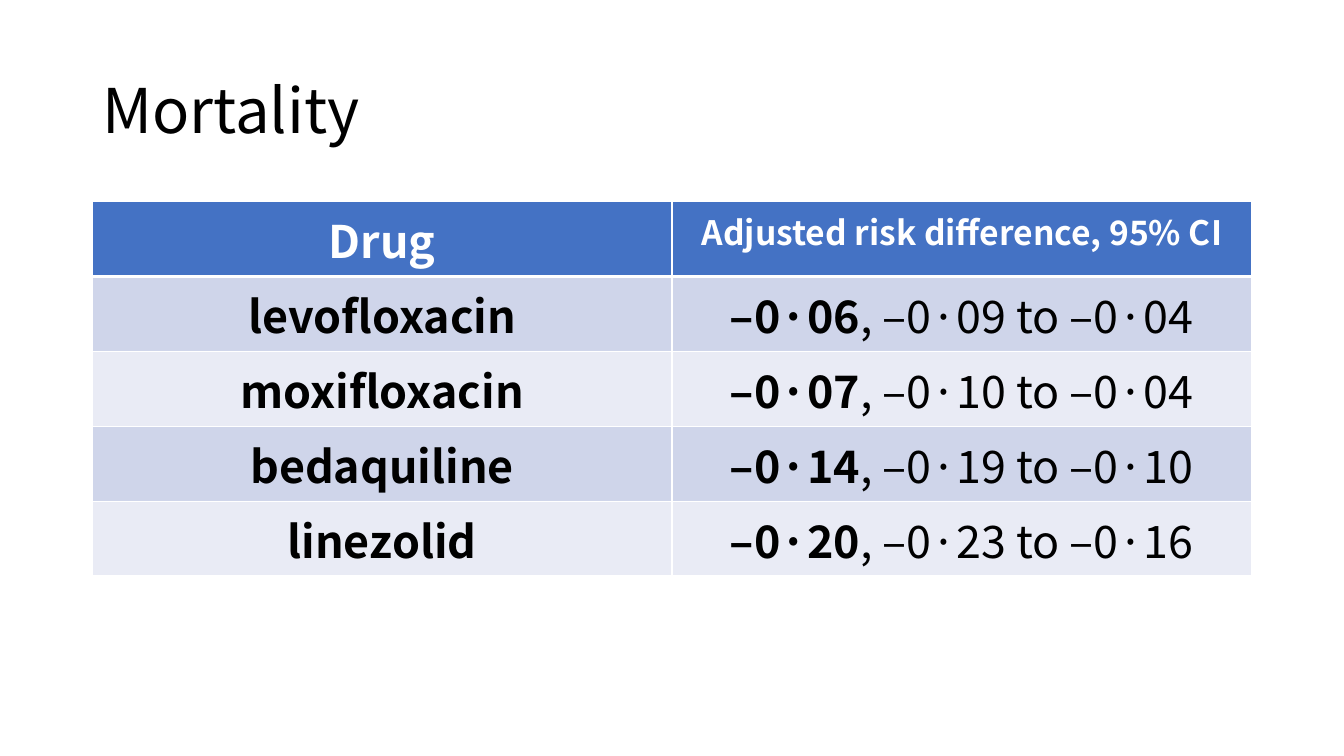
from dataclasses import dataclass

import pptx
import pptx.dml.color
import pptx.enum.text
import pptx.oxml.ns
import pptx.table
import pptx.text.text
import pptx.util
from lxml import etree

Pt = pptx.util.Pt
RGBColor = pptx.dml.color.RGBColor

FONT = "Noto Sans CJK KR"
BLACK = RGBColor(0x00, 0x00, 0x00)
WHITE = RGBColor(0xFF, 0xFF, 0xFF)
HEADER_BLUE = RGBColor(0x44, 0x72, 0xC4)
BAND_DARK = RGBColor(0xCF, 0xD5, 0xEA)
BAND_LIGHT = RGBColor(0xE9, 0xEB, 0xF5)

LEFT, WIDTH = 66, 828
TABLE_TOP, ROW_HEIGHT = 144, 53.5


@dataclass(frozen=True)
class DrugResult:
    drug: str
    difference: str
    interval: str


@dataclass(frozen=True)
class TextRun:
    text: str
    size: float
    color: RGBColor
    bold: bool = True


RESULTS = [
    DrugResult("levofloxacin", "–0·06", "–0·09 to –0·04"),
    DrugResult("moxifloxacin", "–0·07", "–0·10 to –0·04"),
    DrugResult("bedaquiline", "–0·14", "–0·19 to –0·10"),
    DrugResult("linezolid", "–0·20", "–0·23 to –0·16"),
]


def add_run(paragraph: pptx.text.text._Paragraph, content: TextRun) -> None:
    run = paragraph.add_run()
    run.text = content.text
    run.font.size = Pt(content.size)
    run.font.bold = content.bold
    run.font.color.rgb = content.color
    run.font.name = FONT
    properties = run.font._element
    etree.SubElement(properties, pptx.oxml.ns.qn("a:ea"), typeface=FONT)


def set_border(cell: pptx.table._Cell, side: str, width: float) -> None:
    qn = pptx.oxml.ns.qn
    properties = cell._tc.get_or_add_tcPr()
    line = etree.SubElement(properties, qn(f"a:ln{side}"), w=str(Pt(width)))
    fill = etree.SubElement(line, qn("a:solidFill"))
    etree.SubElement(fill, qn("a:srgbClr"), val=str(WHITE))


def fill_cell(
    cell: pptx.table._Cell,
    runs: list[TextRun],
    background: RGBColor,
    top: float,
    bottom: float,
) -> None:
    for side, width in (("L", 1), ("R", 1), ("T", top), ("B", bottom)):
        set_border(cell, side, width)
    cell.fill.solid()
    cell.fill.fore_color.rgb = background
    paragraph = cell.text_frame.paragraphs[0]
    paragraph.alignment = pptx.enum.text.PP_ALIGN.CENTER
    for run in runs:
        add_run(paragraph, run)


def main() -> None:
    presentation = pptx.Presentation()
    presentation.slide_width = Pt(960)
    presentation.slide_height = Pt(540)
    slide = presentation.slides.add_slide(presentation.slide_layouts[6])

    title = slide.shapes.add_textbox(Pt(LEFT), Pt(28.8), Pt(WIDTH), Pt(104.4))
    title.text_frame.word_wrap = True
    title.text_frame.vertical_anchor = pptx.enum.text.MSO_ANCHOR.MIDDLE
    heading = title.text_frame.paragraphs[0]
    heading.line_spacing = 0.9
    add_run(heading, TextRun("Mortality", 44, BLACK, bold=False))

    row_count = len(RESULTS) + 1
    mortality = slide.shapes.add_table(
        row_count, 2, Pt(LEFT), Pt(TABLE_TOP), Pt(WIDTH), Pt(ROW_HEIGHT * row_count)
    ).table

    headers = [
        TextRun("Drug", 32, WHITE),
        TextRun("Adjusted risk difference, 95% CI", 24, WHITE),
    ]
    for column, header in enumerate(headers):
        fill_cell(mortality.cell(0, column), [header], HEADER_BLUE, 1, 3)

    for row, result in enumerate(RESULTS, start=1):
        background = BAND_DARK if row % 2 else BAND_LIGHT
        top = 3 if row == 1 else 1
        drug = [TextRun(result.drug, 32, BLACK)]
        estimate = [
            TextRun(result.difference, 32, BLACK),
            TextRun(f", {result.interval}", 32, BLACK, bold=False),
        ]
        for column, runs in enumerate((drug, estimate)):
            fill_cell(mortality.cell(row, column), runs, background, top, 1)

    presentation.save("out.pptx")


if __name__ == "__main__":
    main()
